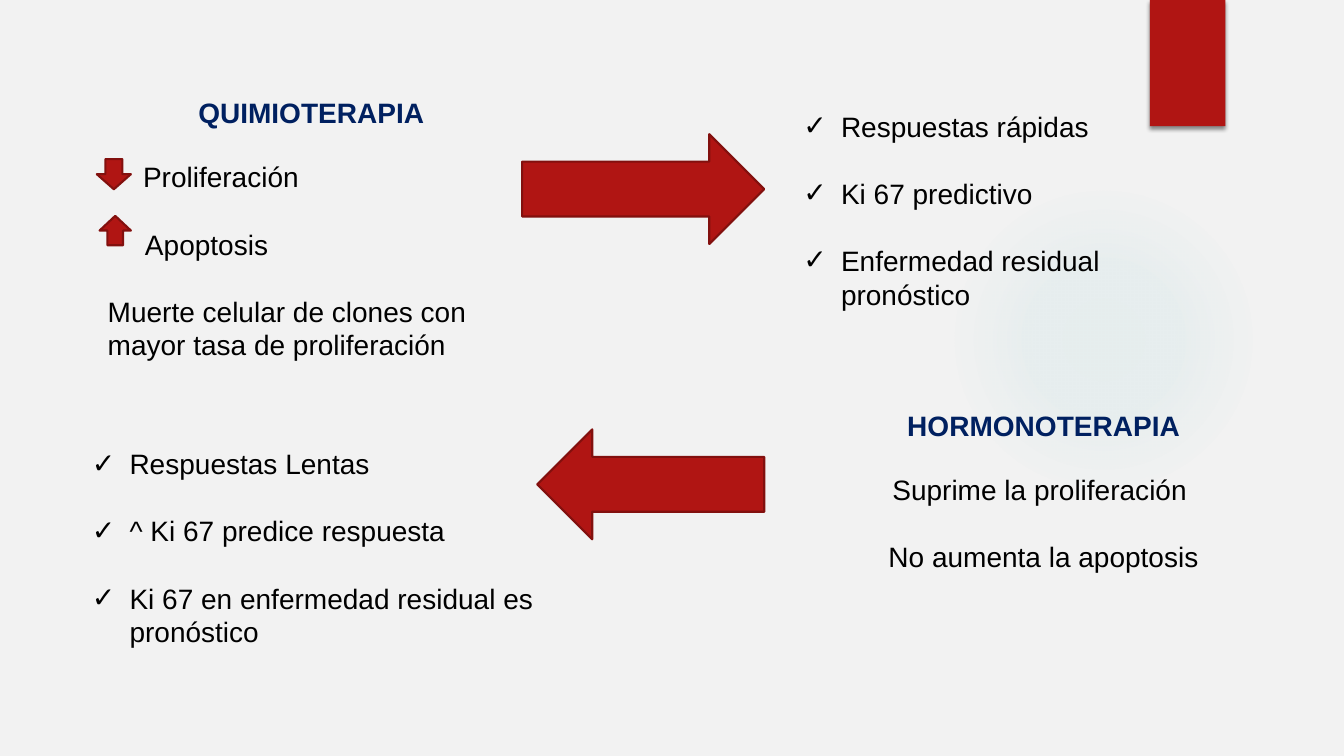
"""Build a slide comparing the responses to chemotherapy and hormone therapy."""
from dataclasses import dataclass

from lxml.etree import SubElement
from pptx import Presentation
from pptx.dml.color import RGBColor
from pptx.enum.shapes import MSO_SHAPE
from pptx.enum.text import MSO_ANCHOR, MSO_AUTO_SIZE, PP_ALIGN
from pptx.oxml import parse_xml
from pptx.oxml.ns import nsdecls, qn
from pptx.util import Cm, Pt


@dataclass(frozen=True)
class Theme:
    background: str = "F2F2F2"
    red: str = "B01513"
    dark_red: str = "82100E"
    navy: str = "002060"
    black: str = "000000"
    glow: str = "50B9C1"
    font: str = "Arial"
    size: float = 20
    line: float = 24
    heading_gap: float = 21.6


theme = Theme()


def add_red_shape(preset, left, top, width, height):
    """Add a flat red shape."""
    shape = page.shapes.add_shape(preset, Cm(left), Cm(top), Cm(width), Cm(height))
    shape.shadow.inherit = False
    shape.fill.solid()
    shape.fill.fore_color.rgb = RGBColor.from_string(theme.red)
    shape.line.fill.background()
    return shape


def format_paragraph(para, gap, indent, bullet, align, heading):
    """Apply indents, bullet, spacing and font to one paragraph."""
    properties = para._p.get_or_add_pPr()
    properties.set("marL", str(Cm(indent)))
    properties.set("indent", str(-Cm(indent) if bullet else 0))
    if bullet:
        SubElement(properties, qn("a:buFont"), typeface=theme.font)
        SubElement(properties, qn("a:buChar"), char="✓")
    else:
        SubElement(properties, qn("a:buNone"))
    para.alignment = align
    para.line_spacing = Pt(theme.line)
    para.space_before = Pt(gap)
    para.space_after = Pt(0)
    for span in para.runs:
        span.font.name = theme.font
        span.font.size = Pt(theme.size)
        span.font.bold = heading
        span.font.color.rgb = RGBColor.from_string(theme.navy if heading else theme.black)


deck = Presentation()
deck.slide_width, deck.slide_height = Cm(33.87), Cm(19.05)
page = deck.slides.add_slide(deck.slide_layouts[4])
page.background.fill.solid()
page.background.fill.fore_color.rgb = RGBColor.from_string(theme.background)
title = page.shapes.title._element
shape_tree = title.getparent()
shape_tree.remove(title)

glow = add_red_shape(MSO_SHAPE.OVAL, 23.9, 4.65, 7.82, 7.82)
stops = "".join(
    f'<a:gs pos="{position * 1000}"><a:srgbClr val="{theme.glow}">'
    f'<a:alpha val="{alpha * 1000}"/></a:srgbClr></a:gs>'
    for position, alpha in ((0, 7), (36, 6), (69, 0))
)
gradient = parse_xml(
    f'<a:gradFill {nsdecls("a")}><a:gsLst>{stops}</a:gsLst><a:path path="circle">'
    '<a:fillToRect l="50000" t="50000" r="50000" b="50000"/></a:path></a:gradFill>'
)
solid_fill = glow._element.spPr.find(qn("a:solidFill"))
solid_fill.getparent().replace(solid_fill, gradient)

tab = add_red_shape(MSO_SHAPE.RECTANGLE, 28.98, 0, 1.9, 3.18)
shadow = SubElement(
    tab._element.spPr.find(qn("a:effectLst")), qn("a:outerShdw"),
    blurRad=str(Pt(3)), dist=str(Pt(2)), dir="5400000", rotWithShape="0",
)
shadow_color = SubElement(shadow, qn("a:srgbClr"), val=theme.black)
SubElement(shadow_color, qn("a:alpha"), val="45000")

for offset, backdrop in enumerate((glow, tab)):
    shape_tree.insert(2 + offset, backdrop._element)

left, center = PP_ALIGN.LEFT, PP_ALIGN.CENTER
panels = [
    ((2.46, 2.29, 10.77, 7.87), True, False, left,
     [("QUIMIOTERAPIA", 0), ("Proliferación", 0.89), ("Apoptosis", 0.94),
      ("Muerte celular de clones con mayor tasa de proliferación", 0)]),
    ((19.76, 10.16, 13.08, 5.31), True, False, center,
     [("HORMONOTERAPIA", 0), ("Suprime la proliferación ", 0),
      ("No aumenta la apoptosis", 0)]),
    ((19.99, 2.62, 8.94, 6.25), False, True, left,
     [("Respuestas rápidas", 0.95), ("Ki 67 predictivo", 0.95),
      ("Enfermedad residual pronóstico", 0.95)]),
    ((2.06, 11.13, 11.79, 5.38), False, True, left,
     [("Respuestas Lentas", 0.95), ("^ Ki 67 predice respuesta", 0.95),
      ("Ki 67 en enfermedad residual es pronóstico", 0.95)]),
]
for number, (place, has_heading, bullet, align, lines) in enumerate(panels, 1):
    box = page.placeholders[number]
    box.left, box.top, box.width, box.height = (Cm(length) for length in place)
    frame = box.text_frame
    frame.text = "\n".join(text for text, indent in lines)
    frame.word_wrap = True
    frame.auto_size = MSO_AUTO_SIZE.NONE
    frame.vertical_anchor = MSO_ANCHOR.TOP
    for index, (para, (text, indent)) in enumerate(zip(frame.paragraphs, lines)):
        heading = has_heading and index == 0
        after_heading = has_heading and index == 1
        gap = 0 if index == 0 else theme.heading_gap if after_heading else theme.line
        format_paragraph(para, gap, indent, bullet, center if heading else align, heading)

arrows = [
    (MSO_SHAPE.RIGHT_ARROW, 13.16, 3.38, 6.1, 2.77),
    (MSO_SHAPE.DOWN_ARROW, 2.44, 4.01, 0.86, 0.76),
    (MSO_SHAPE.UP_ARROW, 2.51, 5.44, 0.79, 0.74),
    (MSO_SHAPE.LEFT_ARROW, 13.54, 10.82, 5.72, 2.77),
]
for preset, *place in arrows:
    arrow = add_red_shape(preset, *place)
    arrow.line.color.rgb = RGBColor.from_string(theme.dark_red)
    arrow.line.width = Pt(1.5)

deck.save("out.pptx")
